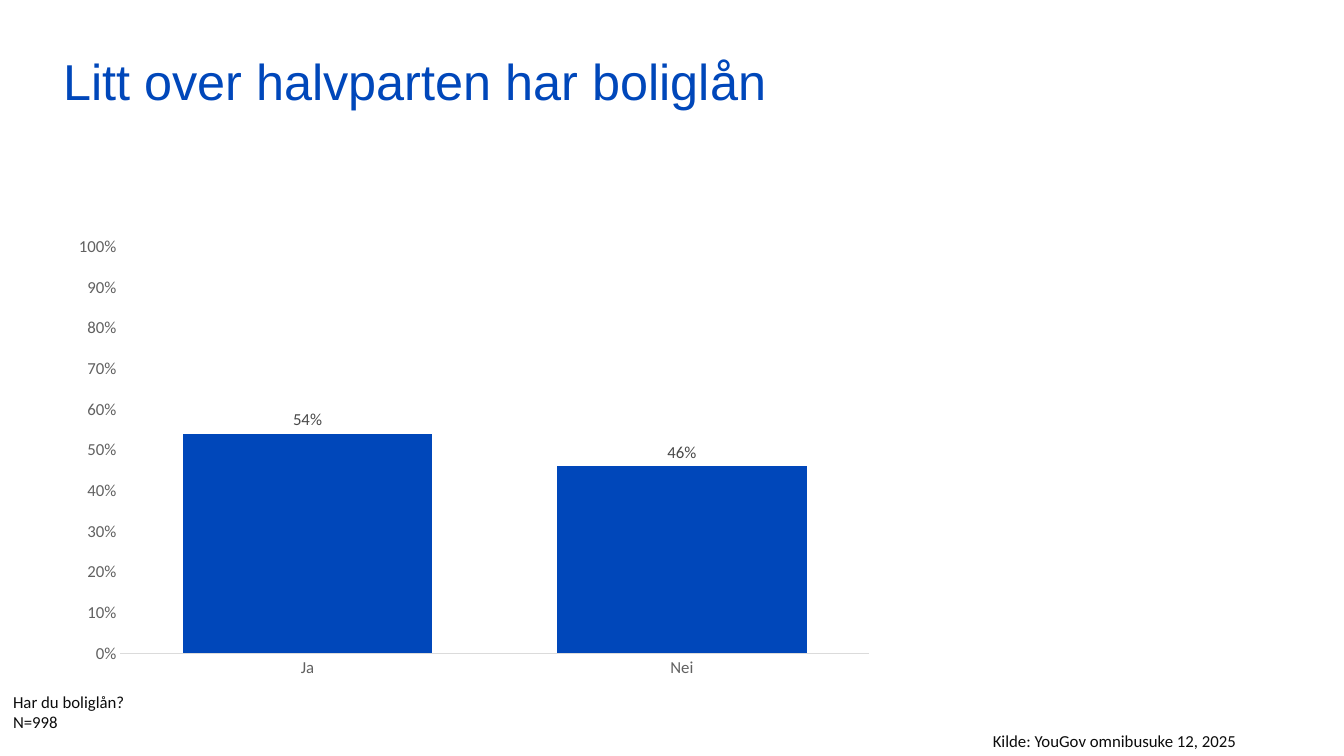
from pptx import Presentation
from pptx.chart.data import CategoryChartData
from pptx.dml.color import RGBColor
from pptx.enum.chart import XL_CHART_TYPE as ChartType, XL_LABEL_POSITION as LabelPosition
from pptx.enum.chart import XL_TICK_MARK as TickMark
from pptx.enum.text import MSO_ANCHOR, MSO_AUTO_SIZE as AutoSize
from pptx.util import Cm, Pt

BLUE, BLACK, GREY, DARK_GREY, PALE = "0047BA", "0C0C0C", "616161", "494949", "DBDBDB"

# Boxes are left, top, width, height in centimetres
TITLE = ("Litt over halvparten har boliglån", (1.6, 1.27, 25.5, 3.07))
NOTES = [
    ("Har du boliglån?\nN=998", (0.08, 17.3, 20.57, 1.28)),
    ("Kilde: YouGov omnibusuke 12, 2025", (24.77, 18.29, 7.52, 0.77)),
]
ANSWERS = {"Ja": 0.54, "Nei": 0.46}
CHART_BOX = (1.57, 5.74, 20.75, 11.56)


def color(value):
    return RGBColor.from_string(value)


def set_font(font, size, value, name="Calibri"):
    font.size, font.name = Pt(size), name
    font.color.rgb = color(value)


def add_text(page, text, place, size, value, name="Calibri"):
    box = page.shapes.add_textbox(*map(Cm, place))
    frame = box.text_frame
    frame.text = text
    frame.word_wrap = True
    frame.vertical_anchor = MSO_ANCHOR.TOP
    for para in frame.paragraphs:
        for span in para.runs:
            set_font(span.font, size, value, name)
    return frame


def add_answer_chart(page):
    data = CategoryChartData(number_format="0%")
    data.categories = list(ANSWERS)
    data.add_series("Series 1", list(ANSWERS.values()))
    chart = page.shapes.add_chart(ChartType.COLUMN_CLUSTERED, *map(Cm, CHART_BOX), data).chart
    chart.has_legend = chart.has_title = False
    set_font(chart.font, 10, BLACK)

    for axis in (chart.category_axis, chart.value_axis):
        axis.major_tick_mark = axis.minor_tick_mark = TickMark.NONE
        axis.has_major_gridlines = False
        set_font(axis.tick_labels.font, 12, GREY)
    chart.category_axis.format.line.color.rgb = color(PALE)
    chart.category_axis.format.line.width = Pt(0.75)
    scale = chart.value_axis
    scale.format.line.fill.background()
    scale.minimum_scale, scale.maximum_scale, scale.major_unit = 0, 1, 0.1
    scale.tick_labels.number_format = "0%"
    scale.tick_labels.number_format_is_linked = False

    plot = chart.plots[0]
    plot.gap_width, plot.overlap, plot.vary_by_categories = 50, -27, False
    series = plot.series[0]
    series.format.fill.solid()
    series.format.fill.fore_color.rgb = color(BLUE)
    labels = series.data_labels
    labels.show_value = True
    labels.position = LabelPosition.OUTSIDE_END
    labels.number_format, labels.number_format_is_linked = "0%", False
    set_font(labels.font, 12, DARK_GREY)


def main():
    deck = Presentation()
    deck.slide_width, deck.slide_height = Cm(33.87), Cm(19.05)
    page = deck.slides.add_slide(deck.slide_layouts[6])
    title = add_text(page, *TITLE, 36, BLUE, "Arial")
    title.margin_left = title.margin_top = title.margin_right = title.margin_bottom = 0
    add_answer_chart(page)
    for text, place in NOTES:
        add_text(page, text, place, 12, BLACK).auto_size = AutoSize.SHAPE_TO_FIT_TEXT
    deck.save("out.pptx")


if __name__ == "__main__":
    main()
